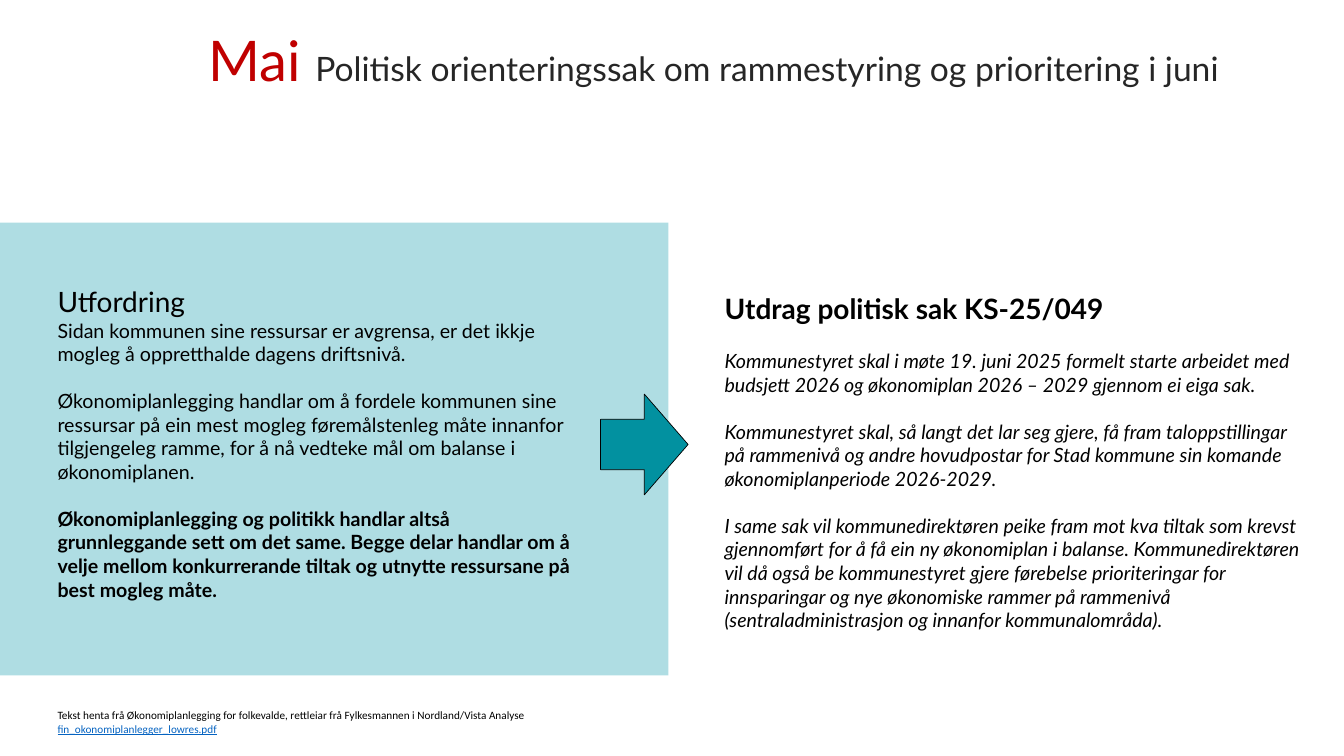
import pptx
import pptx.dml.color
import pptx.enum.shapes
import pptx.enum.text
import pptx.util

Pt = pptx.util.Pt
SHAPES = pptx.enum.shapes.MSO_SHAPE


def color(hex_string):
    return pptx.dml.color.RGBColor.from_string(hex_string)


class SlideBuilder:
    FONT = "Lato"
    TEXT = "000000"
    BODY_SIZE = 14
    BLANK_LINE = 16.8  # line height of body text

    def __init__(self, presentation):
        self.slide = presentation.slides.add_slide(presentation.slide_layouts[6])

    def shape(self, kind, box, fill, line=None):
        shape = self.slide.shapes.add_shape(kind, *map(Pt, box))
        shape.shadow.inherit = False
        shape.fill.solid()
        shape.fill.fore_color.rgb = color(fill)
        if line:
            shape.line.color.rgb = color(line)
            shape.line.width = Pt(0.5)
        else:
            shape.line.fill.background()

    def text(self, box, paragraphs):
        """Add a text box; each paragraph is (space before, [(text, style), ...])."""
        frame = self.slide.shapes.add_textbox(*map(Pt, box)).text_frame
        frame.word_wrap = True
        frame.vertical_anchor = pptx.enum.text.MSO_ANCHOR.TOP
        for index, (space_before, runs) in enumerate(paragraphs):
            paragraph = frame.add_paragraph() if index else frame.paragraphs[0]
            paragraph.space_before = Pt(space_before)
            for text, style in runs:
                run = paragraph.add_run()
                run.text = text
                self.format(run.font, **style)

    def format(self, font, size=BODY_SIZE, name=FONT, fill=TEXT,
               bold=False, italic=False, underline=False):
        font.size = Pt(size)
        font.name = name
        font.color.rgb = color(fill)
        font.bold = bold
        font.italic = italic
        font.underline = underline


def main():
    presentation = pptx.Presentation()
    presentation.slide_width = Pt(960)
    presentation.slide_height = Pt(540)
    builder = SlideBuilder(presentation)
    gap = builder.BLANK_LINE

    builder.shape(SHAPES.RECTANGLE, (0, 159, 477.5, 323.5), "AFDDE3")

    builder.text((34, 200, 386, 235), [
        (0, [("Utfordring", {"size": 20})]),
        (0, [("Sidan kommunen sine ressursar er avgrensa, er det ikkje mogleg å "
              "oppretthalde dagens driftsnivå.", {})]),
        (gap, [("Økonomiplanlegging handlar om å fordele kommunen sine ressursar på ein "
                "mest mogleg føremålstenleg måte innanfor tilgjengeleg ramme, for å nå "
                "vedteke mål om balanse i økonomiplanen.", {})]),
        (gap, [("Økonomiplanlegging og politikk handlar altså grunnleggande sett om det "
                "same. Begge delar handlar om å velje mellom konkurrerande tiltak og "
                "utnytte ressursane på best mogleg måte.", {"bold": True})]),
    ])

    case_extracts = [
        "Kommunestyret skal i møte 19. juni 2025 formelt starte arbeidet med budsjett "
        "2026 og økonomiplan 2026 – 2029 gjennom ei eiga sak.",
        "Kommunestyret skal, så langt det lar seg gjere, få fram taloppstillingar på "
        "rammenivå og andre hovudpostar for Stad kommune sin komande "
        "økonomiplanperiode 2026-2029.",
        "I same sak vil kommunedirektøren peike fram mot kva tiltak som krevst "
        "gjennomført for å få ein ny økonomiplan i balanse. Kommunedirektøren vil då "
        "også be kommunestyret gjere førebelse prioriteringar for innsparingar og nye "
        "økonomiske rammer på rammenivå (sentraladministrasjon og innanfor "
        "kommunalområda).",
    ]
    builder.text((510.5, 205, 429, 252), [
        (0, [("Utdrag politisk sak KS-25/049", {"size": 20, "bold": True})]),
        *[(gap, [(extract, {"italic": True})]) for extract in case_extracts],
    ])

    builder.shape(SHAPES.RIGHT_ARROW, (429, 281.5, 62.5, 72), "0291A0", line="000000")

    builder.text((142, 15, 877, 68), [
        (0, [("Mai ", {"size": 40, "fill": "C00000"}),
             ("Politisk orienteringssak om rammestyring og prioritering i juni",
              {"size": 24, "fill": "262626"})]),
    ])

    source_style = {"size": 8, "name": "Calibri"}
    builder.text((34, 502.5, 386, 27), [
        (0, [("Tekst henta frå Økonomiplanlegging for folkevalde, rettleiar frå "
              "Fylkesmannen i Nordland/Vista Analyse", source_style)]),
        (0, [("fin_okonomiplanlegger_lowres.pdf",
              {**source_style, "fill": "0563C1", "underline": True})]),
    ])

    presentation.save("out.pptx")


if __name__ == "__main__":
    main()
